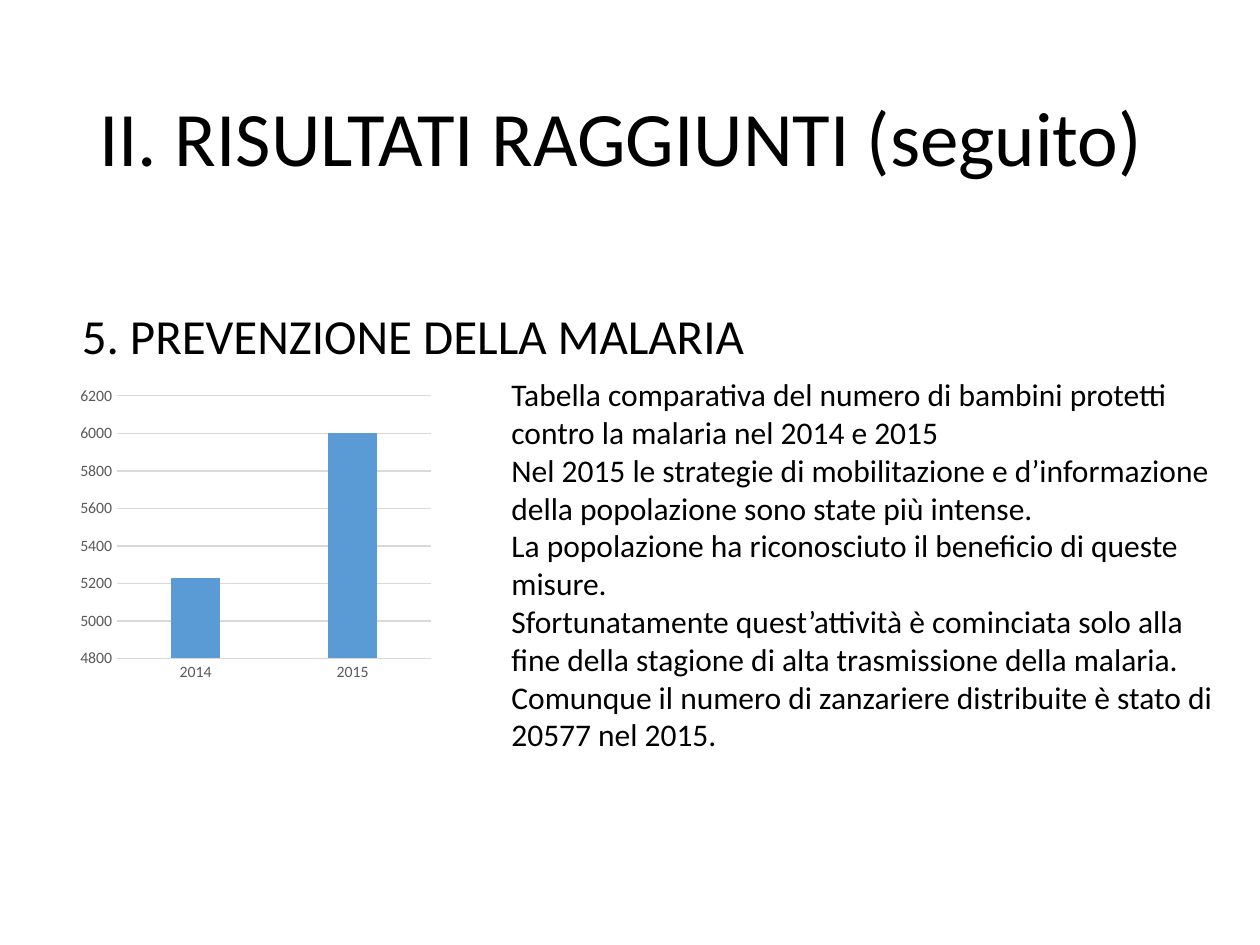
from pptx import Presentation
from pptx import util as u
from pptx.chart.data import CategoryChartData
from pptx.dml.color import RGBColor
from pptx.enum import chart as ch, text

FONT = "Calibri"
BLACK, GREY, LIGHT, BLUE = "000000", "595959", "D9D9D9", "5B9BD5"


def rgb(value):
    return RGBColor.from_string(value)


class SlideBuilder:
    def __init__(self, s):
        self.s = s

    def style_font(self, font, size, color):
        font.name = FONT
        font.size = u.Pt(size)
        font.color.rgb = rgb(color)

    def style_line(self, line):
        line.color.rgb = rgb(LIGHT)
        line.width = u.Pt(0.75)

    def text(self, box, lines, size, anchor=text.MSO_ANCHOR.TOP,
             spacing=1.0, before=0):
        tf = self.s.shapes.add_textbox(*map(u.Cm, box)).text_frame
        tf.word_wrap = True
        tf.vertical_anchor = anchor
        tf.text = "\n".join(lines)
        for p in tf.paragraphs:
            p.line_spacing = spacing
            p.space_before = u.Pt(before)
            for r in p.runs:
                self.style_font(r.font, size, BLACK)

    def column_chart(self, box, categories, values):
        data = CategoryChartData()
        data.categories = categories
        data.add_series("Series 1", values)
        chart = self.s.shapes.add_chart(
            ch.XL_CHART_TYPE.COLUMN_CLUSTERED, *map(u.Cm, box), data).chart
        chart.has_legend = False
        chart.has_title = False
        self.style_font(chart.font, 10, BLACK)

        plot = chart.plots[0]
        plot.vary_by_categories = False
        plot.gap_width = 219
        plot.overlap = -27
        fill = plot.series[0].format.fill
        fill.solid()
        fill.fore_color.rgb = rgb(BLUE)

        for axis in (chart.category_axis, chart.value_axis):
            axis.major_tick_mark = ch.XL_TICK_MARK.NONE
            axis.minor_tick_mark = ch.XL_TICK_MARK.NONE
            self.style_font(axis.tick_labels.font, 9, GREY)
        self.style_line(chart.category_axis.format.line)

        axis = chart.value_axis
        axis.minimum_scale, axis.maximum_scale = 4800, 6200
        axis.major_unit = 200
        axis.format.line.fill.background()
        axis.has_major_gridlines = True
        self.style_line(axis.major_gridlines.format.line)


def main():
    prs = Presentation()
    prs.slide_width, prs.slide_height = u.Cm(25.4), u.Cm(19.05)
    slide = SlideBuilder(prs.slides.add_slide(prs.slide_layouts[6]))

    slide.text((1.75, 1.02, 21.9, 3.68), ["II. RISULTATI RAGGIUNTI (seguito)"],
               44, text.MSO_ANCHOR.MIDDLE, spacing=0.9)
    slide.text((1.4, 6.17, 22.25, 10.11), ["5. PREVENZIONE DELLA MALARIA"],
               28, spacing=0.9, before=10)
    slide.column_chart((1.47, 7.67, 7.37, 6.2), ["2014", "2015"], [5230, 6000])
    slide.text((10.06, 7.44, 14.76, 7.95), [
        "Tabella comparativa del numero di bambini protetti contro la malaria nel 2014 e 2015",
        "Nel 2015 le strategie di mobilitazione e d’informazione della popolazione sono state più intense.",
        "La popolazione ha riconosciuto il beneficio di queste misure.",
        "Sfortunatamente quest’attività è cominciata solo alla fine della stagione di alta trasmissione della malaria.",
        "Comunque il numero di zanzariere distribuite è stato di 20577 nel 2015.",
    ], 18)

    prs.save("out.pptx")


if __name__ == "__main__":
    main()
